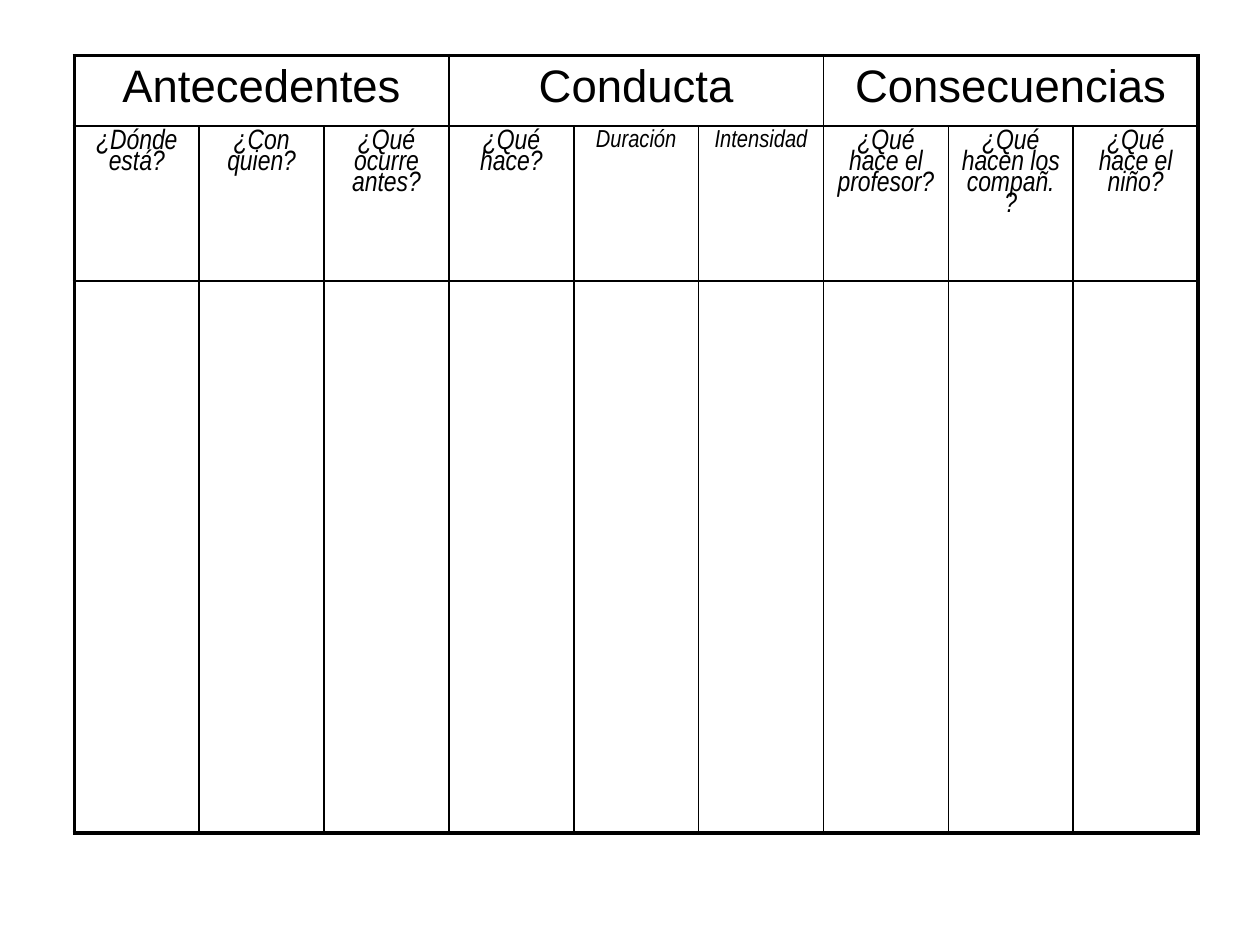
import pptx
import pptx.dml.color
import pptx.enum.text
import pptx.oxml.ns
import pptx.util
from dataclasses import dataclass
from lxml import etree

Inches = pptx.util.Inches
Pt = pptx.util.Pt


@dataclass
class Theme:
    ink: str = "000000"
    head_font: str = "Arial"
    ask_font: str = "Arial Narrow"
    head: int = 26
    ask: int = 16
    small: int = 14
    thin: float = 1
    thick: float = 2.25


GROUPS = {
    "Antecedentes": ["¿Dónde está?", "¿Con quien?", "¿Qué ocurre antes?"],
    "Conducta": ["¿Qué hace?", "Duración", "Intensidad"],
    "Consecuencias": ["¿Qué hace el profesor?", "¿Qué hacen los compañ.?",
                      "¿Qué hace el niño?"],
}
ROWS = [0.56, 1.23, 4.38]
COLS = sum(len(asks) for asks in GROUPS.values())


class Deck:
    def __init__(self, theme):
        self.theme = theme
        self.prs = pptx.Presentation()
        self.prs.slide_width = Inches(10)
        self.prs.slide_height = Inches(7.5)
        self.slide = self.prs.slides.add_slide(self.prs.slide_layouts[6])

    def grid(self, left, top, width, heights, count):
        frame = self.slide.shapes.add_table(
            len(heights), count, Inches(left), Inches(top),
            Inches(width), Inches(sum(heights)))
        table = frame.table
        table.first_row = table.horz_banding = False
        for row, height in zip(table.rows, heights):
            row.height = Inches(height)
        for col in table.columns:
            col.width = Inches(width / count)
        return table

    def frame(self, table, row, col, span=1):
        """Rule one cell: thick on the table's outer edge, thin inside."""
        cell = table.cell(row, col)
        props = cell._tc.get_or_add_tcPr()
        outer = {"L": col == 0, "R": col + span == len(table.columns),
                 "T": row == 0, "B": row + 1 == len(table.rows)}
        for side, edge in outer.items():
            size = self.theme.thick if edge else self.theme.thin
            line = etree.SubElement(props, pptx.oxml.ns.qn(f"a:ln{side}"),
                                    w=str(Pt(size)))
            fill = etree.SubElement(line, pptx.oxml.ns.qn("a:solidFill"))
            etree.SubElement(fill, pptx.oxml.ns.qn("a:srgbClr"),
                             val=self.theme.ink)
        cell.fill.background()

    def text(self, cell, words, size, font, slant=False, pitch=1.0):
        para = cell.text_frame.paragraphs[0]
        para.alignment = pptx.enum.text.PP_ALIGN.CENTER
        para.line_spacing = pitch
        run = para.add_run()
        run.text = words
        run.font.size = Pt(size)
        run.font.name = font
        run.font.italic = slant
        run.font.color.rgb = pptx.dml.color.RGBColor.from_string(
            self.theme.ink)


def main():
    theme = Theme()
    deck = Deck(theme)
    table = deck.grid(0.59, 0.44, 8.92, ROWS, COLS)

    col = 0
    for group, asks in GROUPS.items():
        span = len(asks)
        head = table.cell(0, col)
        head.merge(table.cell(0, col + span - 1))
        deck.frame(table, 0, col, span)
        deck.text(head, group, theme.head, theme.head_font)
        for spot, ask in enumerate(asks, col):
            if spot > col:
                deck.frame(table, 0, spot)
            deck.frame(table, 1, spot)
            deck.frame(table, 2, spot)
            size = theme.ask if ask.startswith("¿") else theme.small
            deck.text(table.cell(1, spot), ask, size, theme.ask_font,
                      slant=True, pitch=0.8)
        col += span

    deck.prs.save("out.pptx")


if __name__ == "__main__":
    main()
